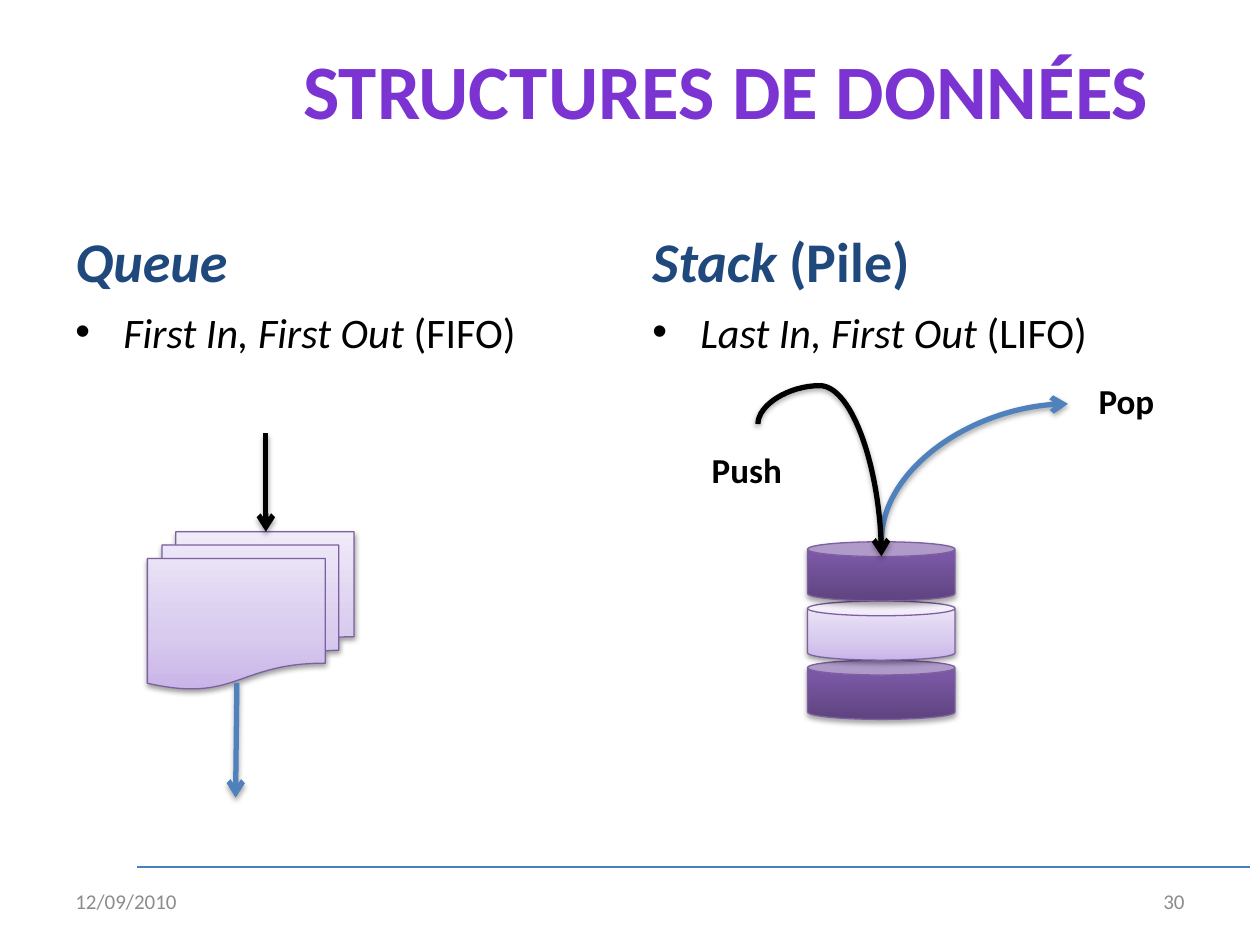
"""Build the slide that compares a queue with a stack."""
from lxml import etree
from pptx import Presentation
from pptx.dml.color import RGBColor
from pptx.enum.shapes import MSO_CONNECTOR, MSO_SHAPE
from pptx.enum.text import MSO_ANCHOR, MSO_AUTO_SIZE, PP_ALIGN
from pptx.oxml import parse_xml
from pptx.oxml.ns import nsdecls, qn
from pptx.util import Inches, Pt

LEFT, CENTER, RIGHT = PP_ALIGN.LEFT, PP_ALIGN.CENTER, PP_ALIGN.RIGHT
TOP, MIDDLE, BOTTOM = MSO_ANCHOR.TOP, MSO_ANCHOR.MIDDLE, MSO_ANCHOR.BOTTOM
STRAIGHT, CURVE = MSO_CONNECTOR.STRAIGHT, MSO_CONNECTOR.CURVE
CAN, DOCS = MSO_SHAPE.CAN, MSO_SHAPE.FLOWCHART_MULTIDOCUMENT

THEME = {
    "font": "Calibri",
    "push": "000000",
    "pop": "4F81BD",
    "rule": "4B7EBC",
    "edge": "7D60A0",
    "dark": [(0, "5F4480"), (80, "7B58A6"), (100, "7C57A8")],
    "light": [(0, "C9B5E8"), (35, "D8CBEE"), (100, "F0EAF9")],
    "title": {"size": 44, "color": "7B34D2", "bold": True},
    "head": {"size": 32, "color": "1F497D", "bold": True},
    "item": {"size": 24, "color": "000000"},
    "label": {"size": 20, "color": "000000", "bold": True},
    "foot": {"size": 12, "color": "8C8C8C"},
}

TITLE = "STRUCTURES DE DONNÉES"
COLUMNS = [
    (0.5, ("Queue", ""), ("First In, First Out", " (FIFO)")),
    (5.08, ("Stack", " (Pile)"), ("Last In, First Out", " (LIFO)")),
]
LABELS = [("Push", (5.55, 3.51, 0.83, 0.44)), ("Pop", (8.62, 2.96, 0.65, 0.44))]
FOOTER = [("12/09/2010", 0.5, LEFT), ("30", 7.17, RIGHT)]
ARROWS = [("push", (2.11, 3.44, 2.11, 4.22)), ("pop", (1.88, 5.42, 1.87, 6.33))]
STACK = {"left": 6.41, "top": 4.3, "width": 1.17, "height": 0.47}
LAYERS = ["dark", "light", "dark"]


def add_shadow(shape, alpha=35, dist=1.8):
    effect = shape._element.spPr.find(qn("a:effectLst"))
    effect.append(parse_xml(
        f'<a:outerShdw {nsdecls("a")} blurRad="{Pt(3.1)}" dist="{Pt(dist)}" '
        f'dir="5400000" rotWithShape="0"><a:srgbClr val="000000">'
        f'<a:alpha val="{alpha * 1000}"/></a:srgbClr></a:outerShdw>'))


def add_solid(slide, kind, box, tone):
    shape = slide.shapes.add_shape(kind, *map(Inches, box))
    shape.line.color.rgb = RGBColor.from_string(THEME["edge"])
    shape.line.width = Pt(0.75)
    shape.shadow.inherit = False
    stops = "".join(f'<a:gs pos="{pos * 1000}"><a:srgbClr val="{color}"/></a:gs>'
                    for pos, color in THEME[tone])
    shape._element.spPr.find(qn("a:prstGeom")).addnext(parse_xml(
        f'<a:gradFill {nsdecls("a")} rotWithShape="1"><a:gsLst>{stops}</a:gsLst>'
        f'<a:lin ang="16200000" scaled="0"/></a:gradFill>'))
    add_shadow(shape, *((38, 1.6) if tone == "light" else (35, 1.8)))


def add_line(slide, ends, tone, width=3, kind=STRAIGHT, arrow=True):
    line = slide.shapes.add_connector(kind, *map(Inches, ends))
    line.line.color.rgb = RGBColor.from_string(THEME[tone])
    line.line.width = Pt(width)
    props = line._element.spPr
    etree.SubElement(props, qn("a:effectLst"))
    if arrow:
        etree.SubElement(props.find(qn("a:ln")), qn("a:tailEnd"), type="arrow")
        add_shadow(line)
    return line


def add_curve(slide, ends, tone, turn, preset, bend=None):
    props = add_line(slide, ends, tone, kind=CURVE)._element.spPr
    props.find(qn("a:xfrm")).set("rot", str(turn * 60000))
    shape = props.find(qn("a:prstGeom"))
    shape.set("prst", preset)
    if bend is not None:
        etree.SubElement(shape.find(qn("a:avLst")), qn("a:gd"),
                         name="adj1", fmla=f"val {round(bend * 100000)}")


def add_text(slide, runs, box, style, align=LEFT, anchor=TOP, wrap=True, bullet=False):
    frame = slide.shapes.add_textbox(*map(Inches, box)).text_frame
    frame.word_wrap = wrap
    frame.auto_size = MSO_AUTO_SIZE.NONE if wrap else MSO_AUTO_SIZE.SHAPE_TO_FIT_TEXT
    frame.vertical_anchor = anchor
    para = frame.paragraphs[0]
    para.alignment = align
    if bullet:
        props = para._p.get_or_add_pPr()
        props.set("marL", str(Inches(0.38)))
        props.set("indent", str(Inches(-0.38)))
        etree.SubElement(props, qn("a:buFont"), typeface="Arial")
        etree.SubElement(props, qn("a:buChar"), char="•")
    look = THEME[style]
    for text, slant in runs:
        run = para.add_run()
        run.text = text
        form = {"name": THEME["font"], "size": Pt(look["size"]),
                "bold": look.get("bold", False), "italic": slant}
        for key, value in form.items():
            setattr(run.font, key, value)
        run.font.color.rgb = RGBColor.from_string(look["color"])


def slanted(pair):
    return [(text, slant) for text, slant in zip(pair, (True, False)) if text]


def main():
    deck = Presentation()
    deck.slide_width, deck.slide_height = Inches(10), Inches(7.5)
    slide = deck.slides.add_slide(deck.slide_layouts[6])

    add_line(slide, (1.09, 6.88, 9.92, 6.88), "rule", 0.75, arrow=False)
    add_text(slide, [(TITLE, False)], (1.72, 0.08, 8.09, 1.25), "title", CENTER, MIDDLE)
    for left, head, item in COLUMNS:
        add_text(slide, slanted(head), (left, 1.68, 4.42, 0.7), "head", anchor=BOTTOM)
        add_text(slide, slanted(item), (left, 2.38, 4.42, 4.32), "item", bullet=True)
    for text, left, align in FOOTER:
        add_text(slide, [(text, False)], (left, 6.95, 2.33, 0.4), "foot", align, MIDDLE)

    add_solid(slide, DOCS, (1.17, 4.22, 1.64, 1.25), "light")
    for tone, ends in ARROWS:
        add_line(slide, ends, tone)

    add_curve(slide, (8.28, 4.49, 7.19, 3.01), "pop", 90, "curvedConnector2")
    left, top, width, height = STACK.values()
    for row, tone in reversed(list(enumerate(LAYERS))):
        add_solid(slide, CAN, (left, top + row * height, width, height), tone)
    add_curve(slide, (7.03, 3.4, 5.98, 4.38), "push", 270, "curvedConnector3", -0.29)
    for text, box in LABELS:
        add_text(slide, [(text, False)], box, "label", wrap=False)

    deck.save("out.pptx")


if __name__ == "__main__":
    main()
